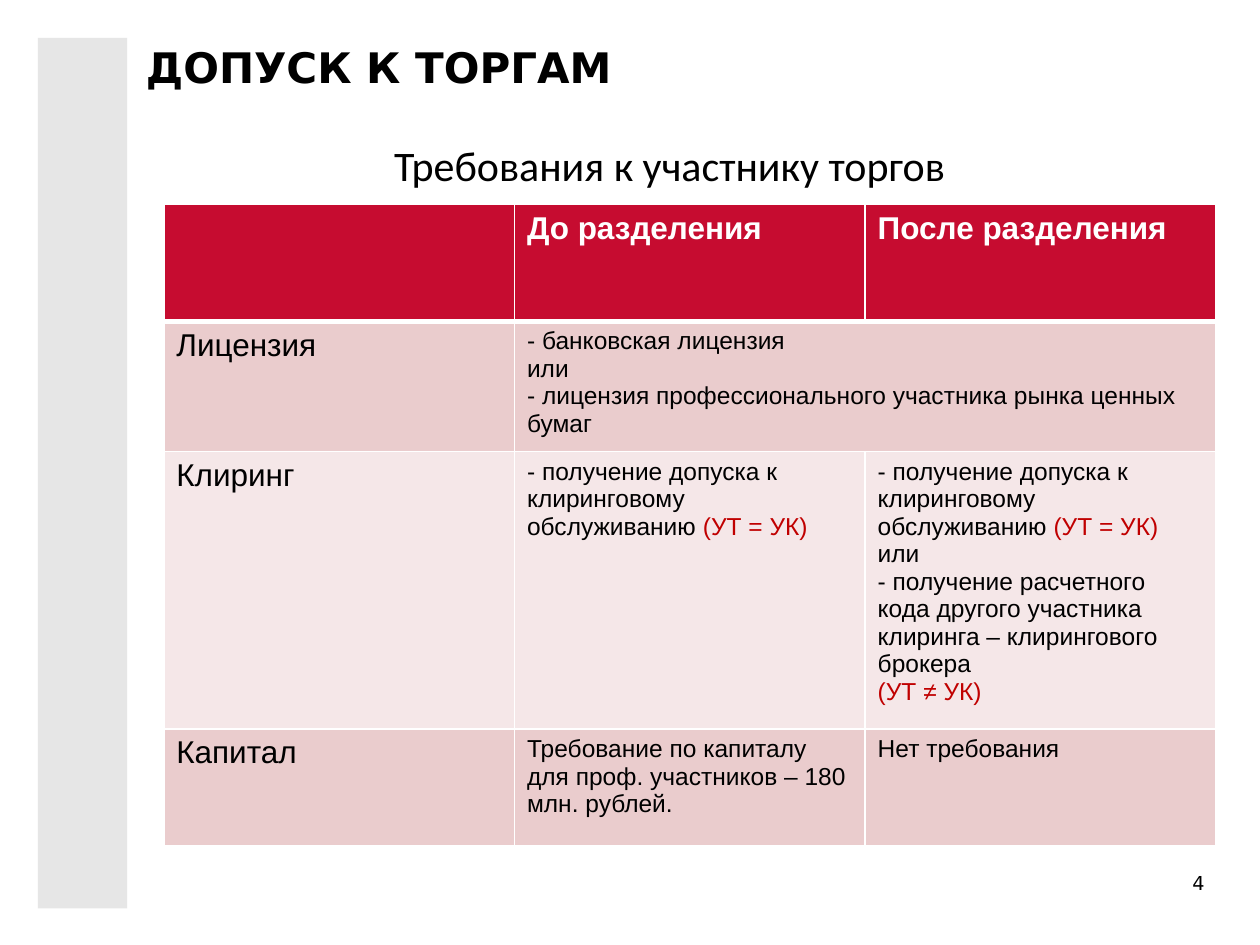
from dataclasses import dataclass

from lxml import etree
from pptx import Presentation
from pptx.dml.color import RGBColor
from pptx.enum.shapes import MSO_SHAPE
from pptx.enum.text import MSO_ANCHOR, PP_ALIGN
from pptx.oxml.ns import qn
from pptx.util import Inches, Pt

RECT = MSO_SHAPE.RECTANGLE
TOP, MIDDLE = MSO_ANCHOR.TOP, MSO_ANCHOR.MIDDLE
LEFT, CENTER, RIGHT = PP_ALIGN.LEFT, PP_ALIGN.CENTER, PP_ALIGN.RIGHT

BLACK = RGBColor(0x00, 0x00, 0x00)
WHITE = RGBColor(0xFF, 0xFF, 0xFF)
GREY = RGBColor(0xE6, 0xE6, 0xE6)
RED = RGBColor(0xC6, 0x0C, 0x30)
ACCENT = RGBColor(0xC0, 0x00, 0x00)
ROSE = RGBColor(0xEA, 0xCC, 0xCD)
PALE = RGBColor(0xF5, 0xE7, 0xE8)


@dataclass
class Label:
    text: str
    box: tuple[float, float, float, float]
    size: int
    font: str
    bold: bool = False
    align: PP_ALIGN = LEFT
    anchor: MSO_ANCHOR = TOP
    inset: float = 0.1
    spacing: float = 1.0


@dataclass
class Row:
    height: float
    fill: RGBColor
    cells: list[str]
    head: bool = False


LABELS = [
    Label("4", (9.17, 6.77, 0.39, 0.39), 11, "DejaVu Sans",
          align=RIGHT, inset=0, spacing=1.5),
    Label("ДОПУСК К ТОРГАМ", (1.06, 0.28, 8.11, 0.99), 24, "DejaVu Sans", bold=True),
    Label("Требования к участнику торгов", (1.06, 1.07, 8.51, 0.47), 24, "Calibri",
          align=CENTER, anchor=MIDDLE),
]

# One line per paragraph; a bracketed ending is shown in the accent colour
ROWS = [
    Row(0.93, RED, ["", "До разделения", "После разделения"], head=True),
    Row(0.93, ROSE, [
        "Лицензия",
        "- банковская лицензия\nили\n"
        "- лицензия профессионального участника рынка ценных бумаг"]),
    Row(2, PALE, [
        "Клиринг",
        "- получение допуска к клиринговому обслуживанию (УТ = УК)",
        "- получение допуска к клиринговому обслуживанию (УТ = УК)\nили\n"
        "- получение расчетного кода другого участника клиринга – "
        "клирингового брокера\n(УТ ≠ УК)"]),
    Row(0.93, ROSE, [
        "Капитал",
        "Требование по капиталу для проф. участников – 180 млн. рублей.",
        "Нет требования"]),
]


def style(font, name: str, size: int, color: RGBColor, bold: bool = False) -> None:
    font.name, font.size, font.bold = name, Pt(size), bold
    font.color.rgb = color


def add_label(slide, label: Label) -> None:
    shape = slide.shapes.add_textbox(*map(Inches, label.box))
    frame = shape.text_frame
    frame.word_wrap = True
    frame.vertical_anchor = label.anchor
    frame.margin_left = frame.margin_right = Inches(label.inset)
    frame.text = label.text
    para = frame.paragraphs[0]
    para.alignment = label.align
    para.line_spacing = label.spacing
    style(para.runs[0].font, label.font, label.size, BLACK, label.bold)


def set_edges(cell, widths: dict[str, int]) -> None:
    props = cell._tc.get_or_add_tcPr()
    for i, (side, width) in enumerate(widths.items()):
        line = etree.Element(qn(f"a:ln{side}"), w=str(Pt(width)))
        fill = etree.SubElement(line, qn("a:solidFill"))
        etree.SubElement(fill, qn("a:srgbClr"), val=str(WHITE))
        props.insert(i, line)


def fill_text(cell, text: str, size: int, color: RGBColor, bold: bool) -> None:
    frame = cell.text_frame
    frame.text = text
    for para in frame.paragraphs:
        plain, mark, note = para.text.partition("(")
        para.text = plain
        if mark:
            para.add_run().text = mark + note
        for run in para.runs:
            tint = ACCENT if run.text.startswith("(") else color
            style(run.font, "Arial", size, tint, bold)


def add_grid(slide) -> None:
    height = sum(row.height for row in ROWS)
    frame = slide.shapes.add_table(len(ROWS), 3, Inches(1.3), Inches(1.62),
                                   Inches(8.35), Inches(height))
    table = frame.table
    for col in table.columns:
        col.width = Inches(8.35 / 3)
    for r, row in enumerate(ROWS):
        table.rows[r].height = Inches(row.height)
        for c in range(3):
            cell = table.cell(r, c)
            cell.fill.solid()
            cell.fill.fore_color.rgb = row.fill
            set_edges(cell, {"L": 1, "R": 1, "T": 3 if r == 1 else 1,
                             "B": 3 if row.head else 1})
        for c, text in enumerate(row.cells):
            size = 18 if row.head or c == 0 else 14
            color = WHITE if row.head else BLACK
            fill_text(table.cell(r, c), text, size, color, row.head)
    # The licence rule covers both periods
    table.cell(1, 1).merge(table.cell(1, 2))


def main() -> None:
    deck = Presentation()
    deck.slide_width, deck.slide_height = Inches(10), Inches(7.5)
    slide = deck.slides.add_slide(deck.slide_layouts[6])

    # Side band
    band = slide.shapes.add_shape(RECT, *map(Inches, (0.3, 0.3, 0.71, 6.91)))
    band.shadow.inherit = False
    band.fill.solid()
    band.fill.fore_color.rgb = GREY
    band.line.fill.background()

    # Page number, title and subtitle
    for label in LABELS:
        add_label(slide, label)

    # Requirements table
    add_grid(slide)
    deck.save("out.pptx")


if __name__ == "__main__":
    main()
